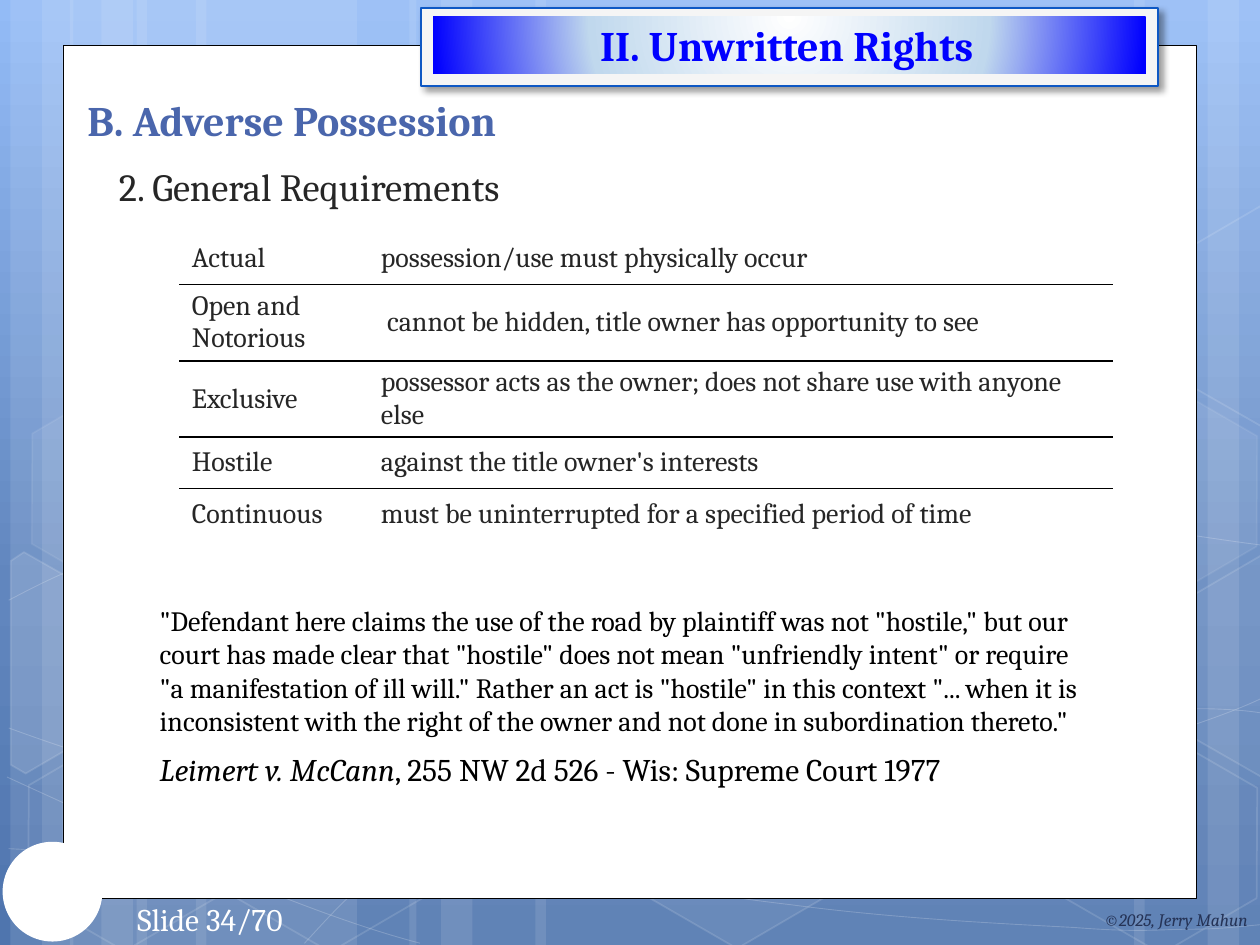
import math
from lxml import etree
from pptx import Presentation
from pptx.dml.color import RGBColor
from pptx.enum.shapes import MSO_SHAPE
from pptx.enum.text import MSO_ANCHOR, MSO_AUTO_SIZE, PP_ALIGN
from pptx.oxml.ns import qn
from pptx.util import Pt

RECTANGLE, HEXAGON, OVAL = MSO_SHAPE.RECTANGLE, MSO_SHAPE.HEXAGON, MSO_SHAPE.OVAL
LEFT, CENTER, RIGHT = PP_ALIGN.LEFT, PP_ALIGN.CENTER, PP_ALIGN.RIGHT
TOP, MIDDLE, BOTTOM = MSO_ANCHOR.TOP, MSO_ANCHOR.MIDDLE, MSO_ANCHOR.BOTTOM
FIT_SHAPE, FIXED_SIZE = MSO_AUTO_SIZE.SHAPE_TO_FIT_TEXT, MSO_AUTO_SIZE.NONE
FONT, WHITE, BLACK, DARK = "Cambria", "FFFFFF", "000000", "262626"

STRIPES = [(78, 126, 0), (6, 36, 0), (24, 60, 0), (112, 126, 0), (40, 36, 0), (58, 60, 0),
           (528, 126, 180), (690, 36, 180), (648, 60, 180),
           (306, 222, 0), (234, 36, 0), (252, 60, 0)]
CURVES = [
    [(5, 485), (44, 487), (83, 489), (137, 488), (191, 487), (258, 486), (330, 479),
     (402, 472), (504, 458), (570, 444), (636, 431), (703, 409), (725, 397)],
    [(5, 343), (26, 332), (47, 321), (87, 310), (128, 300), (186, 284), (250, 279),
     (314, 274), (392, 273), (471, 279), (550, 284), (682, 307), (725, 312)],
    [(4, 444), (91, 484), (178, 523), (240, 539)],
    [(5, 416), (27, 424), (50, 432), (92, 444), (134, 454), (197, 472), (257, 485),
     (317, 497), (392, 510), (452, 517), (512, 525), (576, 528), (614, 530),
     (652, 533), (662, 531), (680, 531), (699, 531), (712, 529), (725, 528)],
    [(174, 539), (187, 525), (200, 510), (217, 498), (235, 485), (259, 470), (279, 460),
     (300, 450), (312, 446), (338, 438), (364, 431), (413, 421), (438, 416),
     (464, 411), (467, 411), (490, 410), (512, 408), (547, 405), (572, 405),
     (597, 404), (638, 405), (638, 405), (638, 405), (686, 405), (686, 405),
     (699, 405), (711, 406), (718, 407), (724, 408), (722, 407), (724, 408)],
]
HEXAGONS = [(240.5, 26, 4, 8), (358, 424, 6, 12), (8, 425.5, None, 12), (10, 224.5, 7, 8),
            (125.5, 426, None, 12), (542, 326, 10, 12), (600.5, 427, None, 12),
            (600.5, 226, 7, 8)]
CUT_HEXAGONS = [
    ((26, 385), 10, [(6, 320.5), (13.5, 315.5), (69, 347), (68.5, 410.5), (14.5, 442), (6, 437)]),
    ((709, 374.5), 4, [(666.5, 349), (720.5, 317.5), (726.5, 321), (726.5, 441.5),
                       (721.5, 444), (666.5, 412.5)]),
    ((709, 173.5), None, [(666.5, 149), (720.5, 117.5), (727, 121), (726.5, 241),
                          (721.5, 244), (666.5, 212.5)]),
]
REQUIREMENTS = [
    ("Actual", "possession/use must physically occur"),
    ("Open and Notorious", " cannot be hidden, title owner has opportunity to see"),
    ("Exclusive", "possessor acts as the owner; does not share use with anyone else"),
    ("Hostile", "against the title owner's interests"),
    ("Continuous", "must be uninterrupted for a specified period of time"),
]
QUOTE = ('"Defendant here claims the use of the road by plaintiff was not "hostile," but our '
         'court has made clear that "hostile" does not mean "unfriendly intent" or require '
         '"a manifestation of ill will." Rather an act is "hostile" in this context "... when '
         'it is inconsistent with the right of the owner and not done in subordination thereto."')


def color(value):
    return RGBColor.from_string(value)


def add_element(parent, tag, **attributes):
    return etree.SubElement(parent, qn(tag), {key: str(value) for key, value in attributes.items()})


def set_opacity(parent, percent):
    if percent < 100:
        add_element(parent.find(qn("a:solidFill"))[0], "a:alpha", val=percent * 1000)


def set_gradient(fill, element, stops):
    fill.gradient()
    gradient = next(element.iter(qn("a:gradFill")))
    for child in list(gradient):
        gradient.remove(child)
    stop_list = add_element(gradient, "a:gsLst")
    for position, value in stops:
        stop = add_element(stop_list, "a:gs", pos=position * 1000)
        add_element(stop, "a:srgbClr", val=value)
    return gradient


def style_shape(shape, fill=None, opacity=100, line=None, width=1, line_opacity=100):
    shape.shadow.inherit = False
    properties = shape.element.spPr
    if fill:
        shape.fill.solid()
        shape.fill.fore_color.rgb = color(fill)
        set_opacity(properties, opacity)
    else:
        shape.fill.background()
    if line:
        shape.line.color.rgb = color(line)
        shape.line.width = Pt(width)
        set_opacity(properties.find(qn("a:ln")), line_opacity)
    else:
        shape.line.fill.background()


def add_shape(slide, kind, frame, rotation=0, **style):
    shape = slide.shapes.add_shape(kind, *map(Pt, frame))
    shape.rotation = rotation
    style_shape(shape, **style)
    return shape


def add_outline(slide, points, close, **style):
    vertices = [(Pt(x), Pt(y)) for x, y in points]
    builder = slide.shapes.build_freeform(*vertices[0])
    builder.add_line_segments(vertices[1:], close=close)
    shape = builder.convert_to_shape()
    style_shape(shape, **style)
    return shape


def add_curve(slide, points, **style):
    shape = add_outline(slide, points, False, **style)
    outline = next(shape.element.iter(qn("a:path")))
    segments = outline.findall(qn("a:lnTo"))
    for start in range(0, len(segments), 3):
        bezier = add_element(outline, "a:cubicBezTo")
        for segment in segments[start:start + 3]:
            bezier.append(segment[0])
            outline.remove(segment)


def turn(points, center, degrees):
    cosine, sine = math.cos(math.radians(degrees)), math.sin(math.radians(degrees))
    offsets = [(x - center[0], y - center[1]) for x, y in points]
    return [(center[0] + x * cosine - y * sine, center[1] + x * sine + y * cosine)
            for x, y in offsets]


def add_run(paragraph, text, size, value, bold=False, italic=False):
    run = paragraph.add_run()
    run.text = text
    font = run.font
    font.name, font.size, font.bold, font.italic = FONT, Pt(size), bold, italic
    font.color.rgb = color(value)


def add_text(slide, frame, paragraphs, align=LEFT, anchor=TOP, wrap=True, fit=FIXED_SIZE,
             space_after=0):
    text_frame = slide.shapes.add_textbox(*map(Pt, frame)).text_frame
    text_frame.word_wrap, text_frame.auto_size = wrap, fit
    text_frame.vertical_anchor = anchor
    for index, runs in enumerate(paragraphs):
        paragraph = text_frame.add_paragraph() if index else text_frame.paragraphs[0]
        paragraph.alignment, paragraph.space_after = align, Pt(space_after)
        for run in runs:
            add_run(paragraph, *run)
    return text_frame


def set_borders(cell, visible):
    properties = cell._tc.get_or_add_tcPr()
    for index, tag in enumerate(("a:lnL", "a:lnR", "a:lnT", "a:lnB")):
        border = etree.Element(qn(tag), {"w": str(Pt(1))})
        if tag in visible:
            add_element(add_element(border, "a:solidFill"), "a:srgbClr", val=BLACK)
        else:
            add_element(border, "a:noFill")
        properties.insert(index, border)


def add_requirements(slide):
    count = len(REQUIREMENTS)
    frame = map(Pt, (102.5, 133.2, 533.3, 29.4 * count))
    table = slide.shapes.add_table(count, 2, *frame).table
    table.first_row = table.horz_banding = False
    table.columns[0].width, table.columns[1].width = Pt(108), Pt(425.3)
    for row, texts in enumerate(REQUIREMENTS):
        visible = {"a:lnT"} if row else set()
        if row < count - 1:
            visible.add("a:lnB")
        for column, text in enumerate(texts):
            cell = table.cell(row, column)
            cell.fill.background()
            cell.vertical_anchor = MIDDLE
            cell.margin_top = cell.margin_bottom = Pt(2.6)
            set_borders(cell, visible)
            add_run(cell.text_frame.paragraphs[0], text, 16, DARK)


def add_backdrop(slide):
    gradient = set_gradient(slide.background.fill, slide.element,
                            [(0, "93BBF6"), (62, "6186BE"), (100, "4F75AE")])
    add_element(gradient, "a:lin", ang=5400000, scaled=0)
    for left, width, rotation in STRIPES:
        add_shape(slide, RECTANGLE, (left, 0, width, 540), rotation, fill=WHITE, opacity=10)
    for points in CURVES:
        add_curve(slide, points, line=WHITE, width=0.5, line_opacity=20)
    for left, top, opacity, line_opacity in HEXAGONS:
        hexagon = add_shape(slide, HEXAGON, (left, top, 126, 109.5), 30,
                            fill=WHITE if opacity else None, opacity=opacity,
                            line=WHITE, line_opacity=line_opacity)
        hexagon.adjustments[0] = 0.285
    for center, opacity, points in CUT_HEXAGONS:
        outline = add_outline(slide, turn(points, center, -30), True,
                              fill=WHITE if opacity else None, opacity=opacity,
                              line=WHITE, line_opacity=12)
        outline.rotation = 30


def add_banner(slide):
    plate = add_shape(slide, RECTANGLE, (240.6, 4.4, 421, 44.7), fill="F5F5F5",
                      line="0E58C4", width=1.25)
    effects = plate.element.spPr.find(qn("a:effectLst"))
    shadow = add_element(effects, "a:outerShdw", blurRad=Pt(4), dist=Pt(3), dir=2700000,
                         algn="tl", rotWithShape=0)
    add_element(add_element(shadow, "a:srgbClr", val=BLACK), "a:alpha", val=40000)
    band = add_shape(slide, RECTANGLE, (247.3, 9.5, 407.5, 32.7))
    gradient = set_gradient(band.fill, band.element,
                            [(0, WHITE), (56, "C0D8ED"), (100, "0000FF")])
    add_element(add_element(gradient, "a:path", path="circle"), "a:fillToRect",
                l=50000, t=-80000, r=50000, b=180000)


def main():
    presentation = Presentation()
    presentation.slide_width, presentation.slide_height = Pt(720), Pt(540)
    slide = presentation.slides.add_slide(presentation.slide_layouts[6])
    add_backdrop(slide)
    add_shape(slide, RECTANGLE, (36, 26, 648, 487.2), fill=WHITE, line=BLACK, width=0.5)
    add_banner(slide)
    add_shape(slide, OVAL, (1.5, 481, 57, 57), fill=WHITE)
    add_text(slide, (51.8, 510.5, 132.5, 29), [[(" Slide 34/70", 18, WHITE)]], CENTER,
             fit=FIT_SHAPE)
    add_text(slide, (316.8, 7.5, 265.5, 36), [[("II. Unwritten Rights", 24, "0000FF", True)]],
             CENTER, wrap=False, fit=FIT_SHAPE)
    add_text(slide, (588, 511, 132, 29), [[("©2025, Jerry Mahun", 10, "253356", False, True)]],
             RIGHT, MIDDLE)
    add_text(slide, (42.8, 52.5, 553, 34), [[("B. Adverse Possession", 24, "4A66AC", True)]],
             anchor=BOTTOM)
    body = add_text(slide, (55.8, 89.6, 609, 383), [[("2. General Requirements", 22, DARK)]])
    body.margin_left = Pt(12.2)
    add_requirements(slide)
    add_text(slide, (84.2, 341.1, 539.3, 133.2),
             [[(QUOTE, 16, BLACK)],
              [("Leimert v. McCann", 18, BLACK, False, True),
               (", 255 NW 2d 526 - Wis: Supreme Court 1977", 18, BLACK)]],
             fit=FIT_SHAPE, space_after=7.2)
    presentation.save("out.pptx")


if __name__ == "__main__":
    main()
